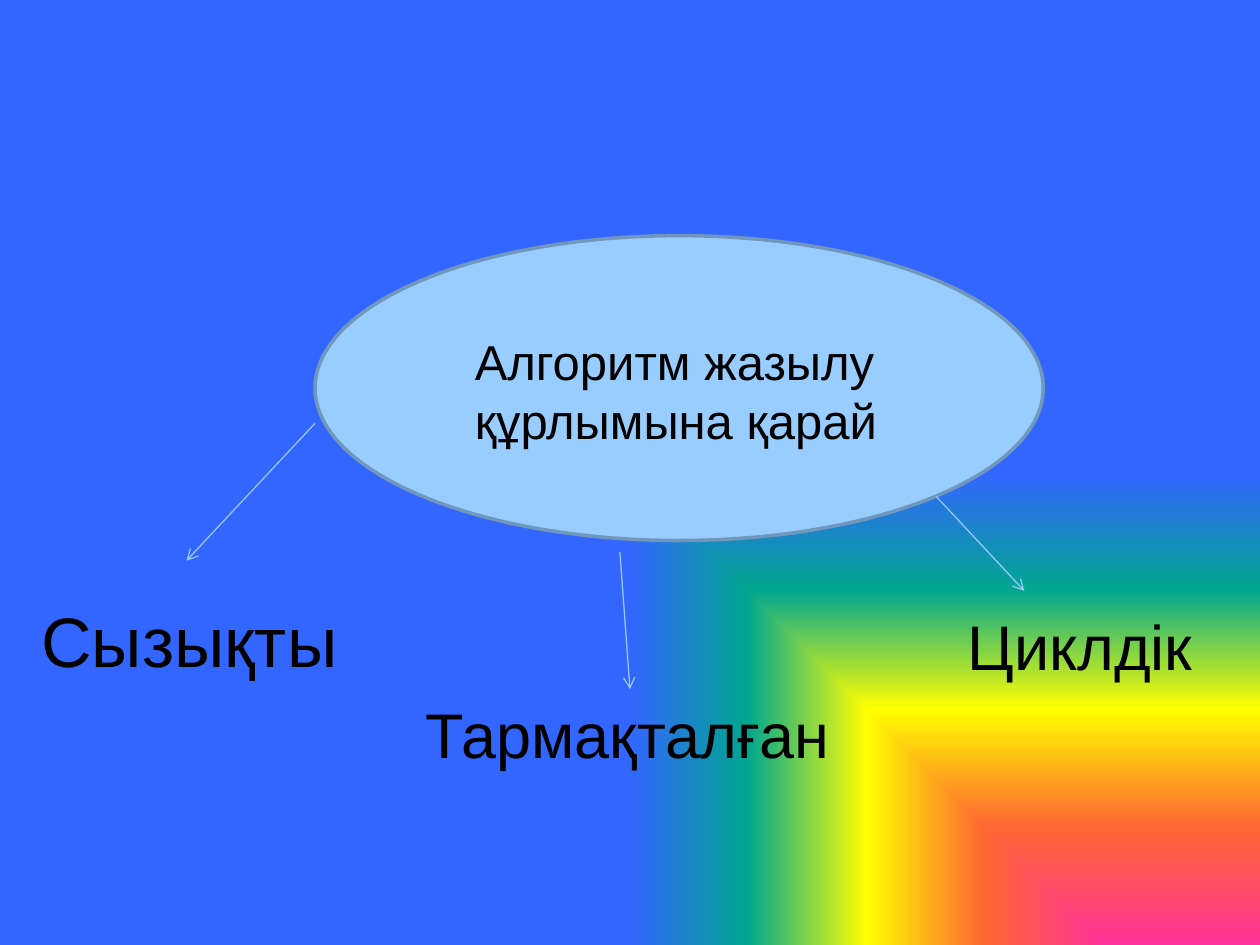
from lxml.etree import SubElement
from pptx import Presentation
from pptx.dml.color import RGBColor
from pptx.enum.shapes import MSO_CONNECTOR as Connector, MSO_SHAPE as Shape
from pptx.oxml import parse_xml
from pptx.oxml.ns import nsdecls, qn
from pptx.util import Inches, Pt

RAINBOW = ["FF3399", "FF6633", "FFFF00", "01A78F", "3366FF"]
BRANCHES = [
    ("Сызықты", 40, (0.23, 4.69, 2.58, 0.77), (2.5, 3.36, 1.48, 4.45)),
    ("Тармақталған", 36, (3.28, 5.47, 3.52, 0.71), (4.92, 4.38, 5, 5.47)),
    ("Циклдік", 36, (7.58, 4.77, 2.11, 0.71), (7.43, 3.94, 8.13, 4.69)),
]


def color(hex_string):
    """Turn a hex string into a colour."""
    return RGBColor.from_string(hex_string)


def paint_background(slide, colors):
    """Fill the background with evenly spaced colours from the bottom right corner."""
    step = 100000 // (len(colors) - 1)
    stops = "".join(
        f'<a:gs pos="{index * step}"><a:srgbClr val="{value}"/></a:gs>'
        for index, value in enumerate(colors)
    )
    background = parse_xml(
        f'<p:bg {nsdecls("p", "a")}><p:bgPr><a:gradFill rotWithShape="1">'
        f'<a:gsLst>{stops}</a:gsLst><a:path path="rect">'
        '<a:fillToRect l="100000" t="100000"/></a:path></a:gradFill>'
        "<a:effectLst/></p:bgPr></p:bg>"
    )
    slide.element.cSld.insert(0, background)


def add_label(slide, box, text, size):
    """Place a wrapped black text in the box."""
    text_frame = slide.shapes.add_textbox(*map(Inches, box)).text_frame
    text_frame.word_wrap = True
    text_frame.text = text
    font = text_frame.paragraphs[0].runs[0].font
    font.name = "Arial"
    font.size = Pt(size)
    font.color.rgb = color("000000")


def add_topic(slide, box, text_box, text):
    """Draw the central ellipse and its text."""
    ellipse = slide.shapes.add_shape(Shape.OVAL, *map(Inches, box))
    ellipse.shadow.inherit = False
    ellipse.fill.solid()
    ellipse.fill.fore_color.rgb = color("99CCFF")
    ellipse.line.color.rgb = color("7197BD")
    ellipse.line.width = Pt(2)
    add_label(slide, text_box, text, 28)


def add_arrow(slide, ends):
    """Draw a thin line with an open arrowhead at its end."""
    arrow = slide.shapes.add_connector(Connector.STRAIGHT, *map(Inches, ends))
    arrow.line.color.rgb = color("93C8FC")
    arrow.line.width = Pt(0.75)
    SubElement(arrow.line._get_or_add_ln(), qn("a:tailEnd"), type="arrow")
    SubElement(arrow.element.spPr, qn("a:effectLst"))


def main():
    """Build and save the slide."""
    presentation = Presentation()
    presentation.slide_width = Inches(10)
    presentation.slide_height = Inches(7.5)
    slide = presentation.slides.add_slide(presentation.slide_layouts[6])
    paint_background(slide, RAINBOW)
    add_topic(slide, (2.5, 1.87, 5.78, 2.42), (3.67, 2.58, 4.3, 1.04),
              "Алгоритм жазылу құрлымына қарай")
    for text, size, box, ends in BRANCHES:
        add_arrow(slide, ends)
        add_label(slide, box, text, size)
    presentation.save("out.pptx")


if __name__ == "__main__":
    main()
